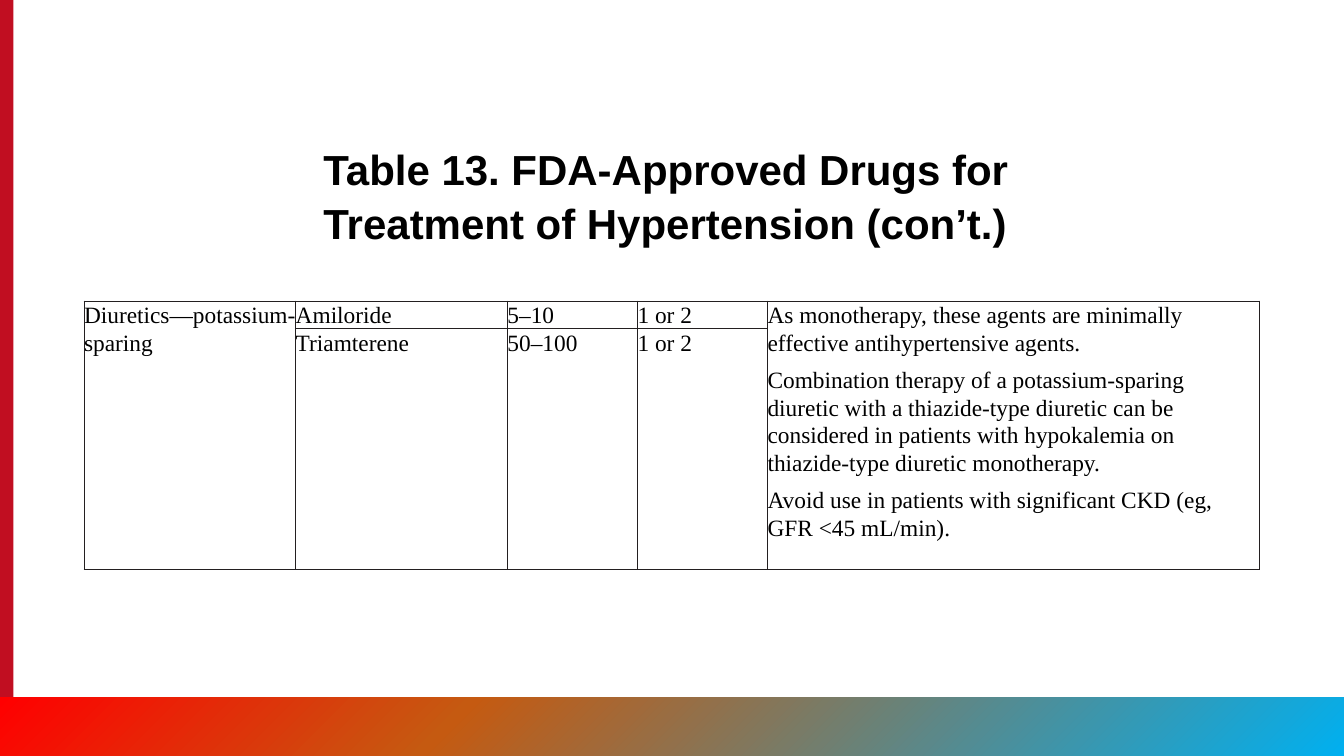
from lxml.etree import SubElement
from pptx import Presentation
from pptx.dml.color import RGBColor
from pptx.enum.shapes import MSO_SHAPE
from pptx.enum.text import MSO_ANCHOR, MSO_AUTO_SIZE, PP_ALIGN
from pptx.oxml import parse_xml
from pptx.oxml.ns import nsdecls, qn
from pptx.util import Pt

BLACK, RED, BORDER = "000000", "C10E21", "231F20"
BAR_STOPS = [(0, "00B0F0"), (66, "C55A11"), (100, "FF0000")]
COL_WIDTHS = [181.5, 181.5, 111.5, 111.5, 422]
ROW_HEIGHTS = [23, 206]
ROWS = [
    [["Diuretics—potassium-sparing"], ["Amiloride"], ["5–10"], ["1 or 2"], [
        "As monotherapy, these agents are minimally effective antihypertensive agents.",
        "Combination therapy of a potassium-sparing diuretic with a thiazide-type "
        "diuretic can be considered in patients with hypokalemia on thiazide-type "
        "diuretic monotherapy.",
        "Avoid use in patients with significant CKD (eg, GFR <45 mL/min).",
    ]],
    [[], ["Triamterene"], ["50–100"], ["1 or 2"], []],
]


def rgb(value):
    return RGBColor.from_string(value)


def set_font(p, name, size, bold=False):
    p.font.name, p.font.size, p.font.bold = name, Pt(size), bold
    p.font.color.rgb = rgb(BLACK)


def add_bar(s, x, y, w, h, color):
    bar = s.shapes.add_shape(MSO_SHAPE.RECTANGLE, Pt(x), Pt(y), Pt(w), Pt(h))
    bar.shadow.inherit = False
    bar.fill.solid()
    bar.fill.fore_color.rgb = rgb(color)
    bar.line.fill.background()
    return bar


def set_gradient(shape, stops, angle):
    stop_xml = "".join(
        f'<a:gs pos="{pos * 1000}"><a:srgbClr val="{color}"/></a:gs>'
        for pos, color in stops)
    grad = parse_xml(
        f'<a:gradFill {nsdecls("a")} rotWithShape="1"><a:gsLst>{stop_xml}</a:gsLst>'
        f'<a:lin ang="{angle * 60000}" scaled="0"/></a:gradFill>')
    solid = shape.element.spPr.find(qn("a:solidFill"))
    solid.getparent().replace(solid, grad)


def set_title(s, text):
    title = s.shapes.title
    title.left, title.top, title.width, title.height = Pt(270), Pt(120), Pt(612), Pt(96)
    tf = title.text_frame
    tf.text = text
    tf.word_wrap = True
    tf.auto_size = MSO_AUTO_SIZE.NONE
    tf.vertical_anchor = MSO_ANCHOR.BOTTOM
    p = tf.paragraphs[0]
    p.alignment = PP_ALIGN.LEFT
    p.line_spacing = 1.06
    set_font(p, "Arial", 36, bold=True)


def set_borders(cell, color, width):
    tcPr = cell._tc.get_or_add_tcPr()
    for side in ("lnL", "lnR", "lnT", "lnB"):
        ln = SubElement(tcPr, qn(f"a:{side}"), w=str(Pt(width)))
        fill = SubElement(ln, qn("a:solidFill"))
        SubElement(fill, qn("a:srgbClr"), val=color)


def fill_cell(cell, texts):
    cell.margin_left = cell.margin_right = cell.margin_top = cell.margin_bottom = 0
    set_borders(cell, BORDER, 1)
    cell.fill.background()
    tf = cell.text_frame
    for i, text in enumerate(texts):
        p = tf.add_paragraph() if i else tf.paragraphs[0]
        p.text = text
        p.line_spacing = 1.07
        p.space_after = Pt(8)
        set_font(p, "Times New Roman", 20)


def add_drug_table(s):
    table = s.shapes.add_table(
        len(ROWS), len(COL_WIDTHS), Pt(72), Pt(258),
        Pt(sum(COL_WIDTHS)), Pt(sum(ROW_HEIGHTS))).table
    table.first_row = table.horz_banding = False
    for col, width in zip(table.columns, COL_WIDTHS):
        col.width = Pt(width)
    for row, height, texts in zip(table.rows, ROW_HEIGHTS, ROWS):
        row.height = Pt(height)
        for cell, cell_texts in zip(row.cells, texts):
            fill_cell(cell, cell_texts)
    # Drug class and comments span both drugs
    for c in (0, 4):
        table.cell(0, c).merge(table.cell(1, c))


def main():
    prs = Presentation()
    prs.slide_width, prs.slide_height = Pt(1152), Pt(648)
    s = prs.slides.add_slide(prs.slide_layouts[5])

    # Side and bottom bars
    add_bar(s, 0, 0, 11.5, 648, RED)
    bottom = add_bar(s, 0, 597.6, 1152, 50.4, RED)
    set_gradient(bottom, BAR_STOPS, 45)
    bottom.rotation = 180

    # Title and table
    set_title(s, "Table 13. FDA-Approved Drugs for Treatment of Hypertension (con’t.)")
    add_drug_table(s)
    prs.save("out.pptx")


if __name__ == "__main__":
    main()
